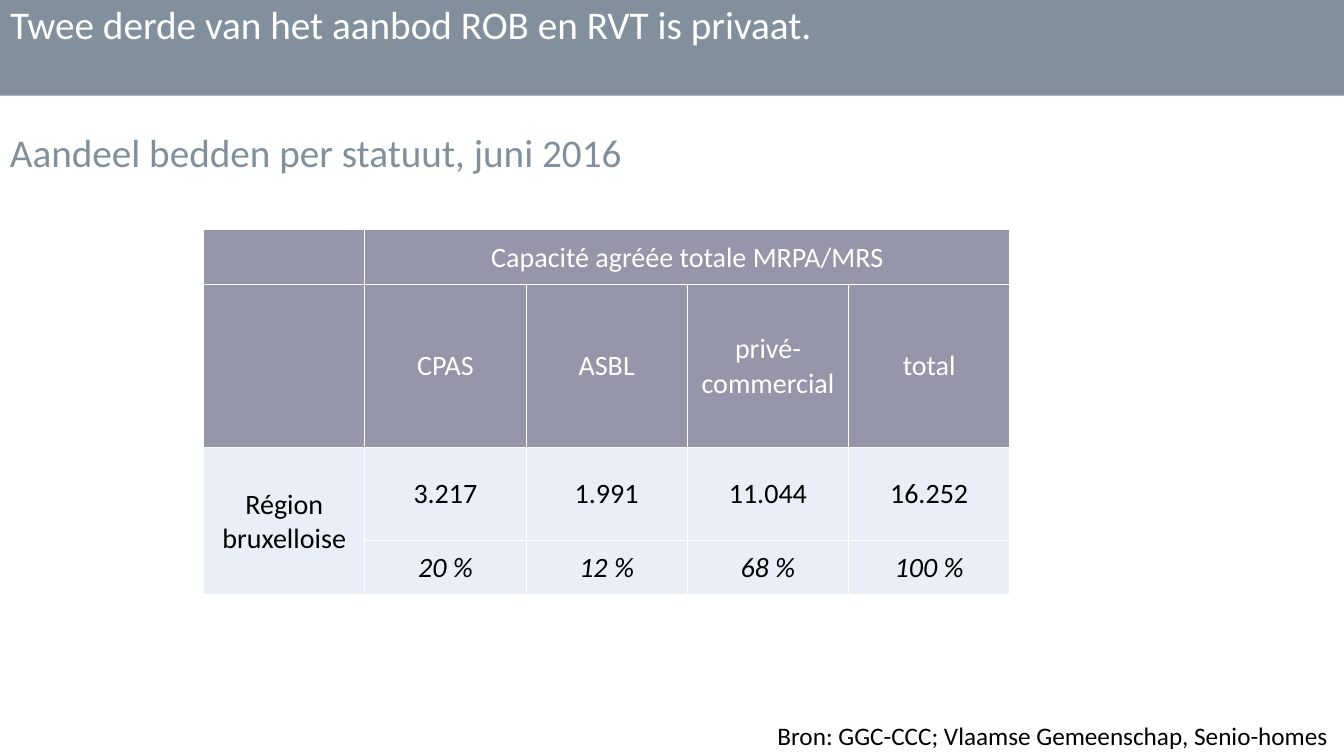
from lxml import etree
from pptx import Presentation, util as u
from pptx.dml.color import RGBColor
from pptx.enum import shapes, text
from pptx.oxml import ns

SLATE = RGBColor(0x82, 0x90, 0x9D)
MAUVE = RGBColor(0x96, 0x96, 0xAA)
PALE_BLUE = RGBColor(0xEA, 0xEF, 0xF7)
WHITE = RGBColor(0xFF, 0xFF, 0xFF)
BLACK = RGBColor(0x00, 0x00, 0x00)

COLUMN_WIDTH = 12
ROW_HEIGHTS = [7.2, 21.6, 12.27, 7.2]
HEADER_ROWS = 2
PERCENT_ROW = 3
CAPACITY = [
    ["", "Capacité agréée totale MRPA/MRS", "", "", ""],
    ["", "CPAS", "ASBL", "privé-\vcommercial", "total"],
    ["Région bruxelloise", "3.217", "1.991", "11.044", "16.252"],
    ["", "20 %", "12 %", "68 %", "100 %"],
]


class SlideBuilder:
    """Places elements on a grid of 100 columns by 100 rows."""

    font_name = "Calibri"

    def __init__(self, deck):
        self.page = deck.slides.add_slide(deck.slide_layouts[5])
        self.column = deck.slide_width / 100
        self.row = deck.slide_height / 100

    def area(self, left, top, width, height):
        return (round(left * self.column), round(top * self.row),
                round(width * self.column), round(height * self.row))

    def set_words(self, frame, words, size, color, align=text.PP_ALIGN.LEFT, italic=False):
        frame.text = words
        para = frame.paragraphs[0]
        para.alignment = align
        para.font.name = self.font_name
        para.font.size = u.Pt(size)
        para.font.color.rgb = color
        para.font.bold = False
        para.font.italic = italic

    def title(self, words, *place):
        box = self.page.shapes.title
        box.left, box.top, box.width, box.height = self.area(*place)
        frame = box.text_frame
        frame.auto_size = text.MSO_AUTO_SIZE.NONE
        frame.vertical_anchor = text.MSO_ANCHOR.TOP
        self.set_words(frame, words, 28, WHITE)

    def band_behind_title(self, *place):
        band = self.page.shapes.add_shape(shapes.MSO_SHAPE.RECTANGLE, *self.area(*place))
        band.shadow.inherit = False
        band.fill.solid()
        band.fill.fore_color.rgb = SLATE
        band.line.fill.background()
        self.page.shapes.title.element.addprevious(band.element)

    def label(self, words, *place, size, color, align=text.PP_ALIGN.LEFT, right_inset=0.1):
        frame = self.page.shapes.add_textbox(*self.area(*place)).text_frame
        frame.word_wrap = True
        frame.margin_right = u.Inches(right_inset)
        self.set_words(frame, words, size, color, align)

    def border(self, cell):
        properties = cell._tc.get_or_add_tcPr()
        for side in ("lnL", "lnR", "lnT", "lnB"):
            line = etree.SubElement(properties, ns.qn(f"a:{side}"), w=str(u.Pt(1)))
            fill = etree.SubElement(line, ns.qn("a:solidFill"))
            etree.SubElement(fill, ns.qn("a:srgbClr"), val=str(WHITE))

    def cell(self, cell, words, is_header, italic):
        self.border(cell)
        cell.fill.solid()
        cell.fill.fore_color.rgb = MAUVE if is_header else PALE_BLUE
        cell.vertical_anchor = text.MSO_ANCHOR.MIDDLE
        cell.margin_left = cell.margin_right = cell.margin_top = u.Inches(0.01)
        cell.margin_bottom = 0
        self.set_words(cell.text_frame, words, 20, WHITE if is_header else BLACK,
                       text.PP_ALIGN.CENTER, italic)

    def capacity_table(self, left, top):
        count = len(CAPACITY[0])
        place = self.area(left, top, count * COLUMN_WIDTH, sum(ROW_HEIGHTS))
        table = self.page.shapes.add_table(len(CAPACITY), count, *place).table
        table.first_row = table.horz_banding = False
        for column in table.columns:
            column.width = round(COLUMN_WIDTH * self.column)
        for index, (height, entries) in enumerate(zip(ROW_HEIGHTS, CAPACITY)):
            table.rows[index].height = round(height * self.row)
            for cell, words in zip(table.rows[index].cells, entries):
                self.cell(cell, words, index < HEADER_ROWS, index == PERCENT_ROW)
        table.cell(0, 1).merge(table.cell(0, count - 1))
        table.cell(HEADER_ROWS, 0).merge(table.cell(PERCENT_ROW, 0))


def main():
    deck = Presentation()
    deck.slide_width, deck.slide_height = u.Inches(13.33), u.Inches(7.5)
    slide = SlideBuilder(deck)
    slide.title("Twee derde van het aanbod ROB en RVT is privaat.", 0, -0.67, 100, 7.6)
    slide.band_behind_title(0, 0, 100, 12.67)
    slide.label("Bron: GGC-CCC; Vlaamse Gemeenschap, Senio-homes", 55.2, 94.67, 44.8, 5.33,
                size=18, color=BLACK, align=text.PP_ALIGN.RIGHT, right_inset=0.16)
    slide.label("Aandeel bedden per statuut, juni 2016", 0, 16.27, 100, 7.6,
                size=28, color=SLATE)
    slide.capacity_table(15.15, 30.4)
    deck.save("out.pptx")


if __name__ == "__main__":
    main()
